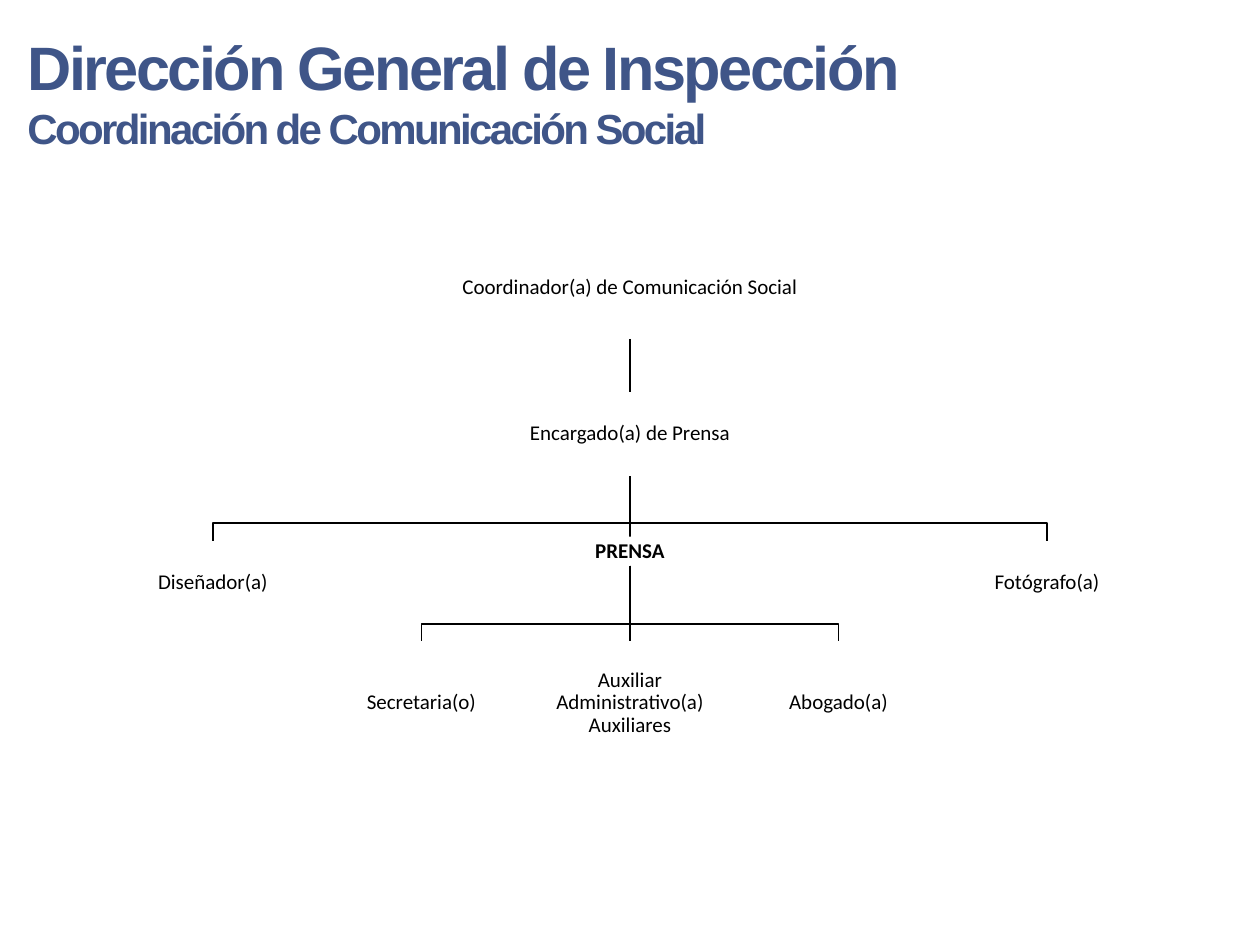
from pptx import Presentation
from pptx.dml.color import RGBColor as Rgb
from pptx.enum.shapes import MSO_CONNECTOR as Link, MSO_SHAPE as Form
from pptx.enum.text import MSO_ANCHOR as Anchor, MSO_AUTO_SIZE as Fit, PP_ALIGN as Align
from pptx.oxml.ns import qn
from pptx.util import Inches, Pt
from lxml.etree import SubElement

HUES = {"ink": "000000", "paper": "FFFFFF", "title": "3F5588"}
TITLE = [("Dirección General de Inspección", 35), ("Coordinación de Comunicación Social", 24)]
MID, STEP, BEND = 5, 3.31 / 2, 0.14

# key: (lines, column, top, width, height, bold, parent)
POSTS = {
    "head": (["Coordinador(a) de Comunicación Social"], 0, 1.88, 2.87, 0.81, False, None),
    "lead": (["Encargado(a) de Prensa"], 0, 3.11, 2.02, 0.67, False, "head"),
    "design": (["Diseñador(a)"], -2, 4.29, 1.37, 0.67, False, "lead"),
    "press": (["PRENSA"], 0, 4.26, 1.37, 0.23, True, "lead"),
    "photo": (["Fotógrafo(a)"], 2, 4.29, 1.37, 0.67, False, "lead"),
    "clerk": (["Secretaria(o)"], -1, 5.09, 1.37, 0.98, False, "press"),
    "aide": (["Auxiliar Administrativo(a)", "Auxiliares"], 0, 5.09, 1.37, 0.98, False, "press"),
    "law": (["Abogado(a)"], 1, 5.09, 1.37, 0.98, False, "press"),
}


def hue(name):
    return Rgb.from_string(HUES[name])


def put(item, vals):
    for key, val in vals.items():
        setattr(item, key, val)


def write(frame, rows, color, para, font):
    for i, (text, size) in enumerate(rows):
        par = frame.paragraphs[0] if i == 0 else frame.add_paragraph()
        put(par, para)
        run = par.add_run()
        run.text = text
        put(run.font, {"size": Pt(size), **font})
        run.font.color.rgb = hue(color)
        yield run


def ink(line):
    line.color.rgb = hue("ink")
    line.width = Pt(1)


def add_post(shapes, lines, col, top, wide, high, bold):
    left = MID + col * STEP - wide / 2
    box = shapes.add_shape(Form.RECTANGLE, *map(Inches, (left, top, wide, high)))
    box.shadow.inherit = False
    box.fill.solid()
    box.fill.fore_color.rgb = hue("paper")
    box.line.fill.background()
    frame = box.text_frame
    edges = ("margin_left", "margin_top", "margin_right", "margin_bottom")
    put(frame, {"word_wrap": True, "vertical_anchor": Anchor.MIDDLE,
                **dict.fromkeys(edges, Inches(0.01))})
    list(write(frame, [(text, 12) for text in lines], "ink",
               {"alignment": Align.CENTER, "line_spacing": 0.9},
               {"name": "Calibri", "bold": bold}))
    return box


def add_drop(shapes, boss, post):
    line = shapes.add_connector(Link.STRAIGHT, 0, 0, 0, 0)
    line.begin_connect(boss, 2)
    line.end_connect(post, 0)
    SubElement(line._element.spPr, qn("a:effectLst"))
    ink(line.line)
    fx = line._element.spPr.find(qn("a:effectLst"))
    line._element.spPr.append(fx)


def add_elbow(shapes, boss, post):
    x, y = boss.left + boss.width // 2, boss.top + boss.height
    end = post.left + post.width // 2
    bend = post.top - Inches(BEND)
    pen = shapes.build_freeform(x, y)
    pen.add_line_segments([(x, bend), (end, bend), (end, post.top)], close=False)
    line = pen.convert_to_shape()
    line.shadow.inherit = False
    line.fill.background()
    ink(line.line)


def main():
    deck = Presentation()
    put(deck, {"slide_width": Inches(10), "slide_height": Inches(7.5)})
    shapes = deck.slides.add_slide(deck.slide_layouts[6]).shapes

    made = {}
    for key, (*post, boss) in POSTS.items():
        made[key] = add_post(shapes, *post)
        if boss:
            join = add_elbow if post[1] else add_drop
            join(shapes, made[boss], made[key])

    frame = shapes.add_textbox(*map(Inches, (0.12, 0.18, 7.46, 1.09))).text_frame
    put(frame, {"word_wrap": True, "auto_size": Fit.SHAPE_TO_FIT_TEXT})
    for run in write(frame, TITLE, "title", {}, {"name": "Arial", "bold": True}):
        run._r.get_or_add_rPr().set("spc", "-150")

    deck.save("out.pptx")


if __name__ == "__main__":
    main()
